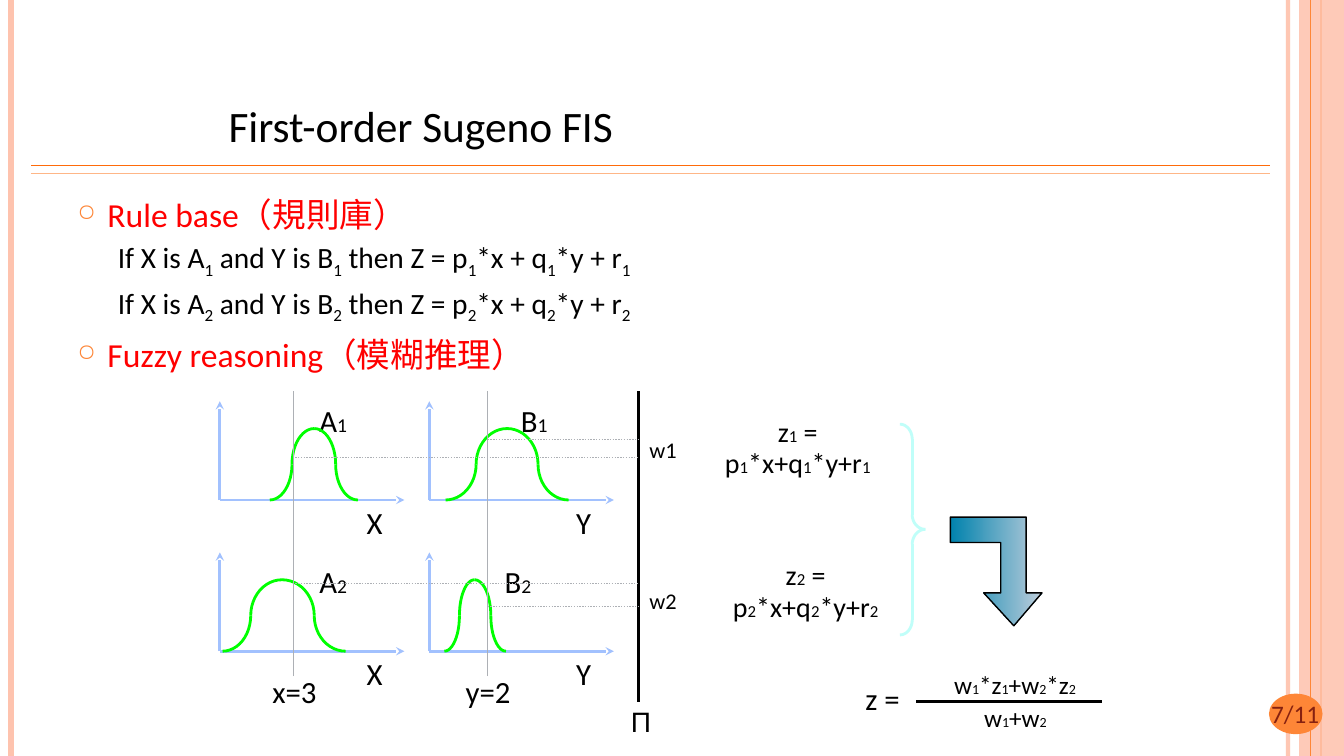
from math import cos, pi, sin

from lxml.etree import SubElement
from pptx import Presentation
from pptx.dml.color import RGBColor
from pptx.enum.dml import MSO_LINE as Dash
from pptx.enum.shapes import MSO_CONNECTOR as Link, MSO_SHAPE as Preset
from pptx.enum.text import MSO_ANCHOR as Anchor, MSO_AUTO_SIZE as Fit, PP_ALIGN as Align
from pptx.oxml.ns import qn
from pptx.util import Cm, Pt

BLACK, RED, ORANGE = "000000", "FF0000", "FE8637"
PEACH, AXIS, GUIDE = "FEC3AE", "A2C1FE", "ADB0B5"
GREEN, AQUA = "00FF00", "C0FEF9"
COLUMN_STEP, ROW_STEP = 5.28, 3.81
BASE, BELL_HALF = 12.6, 0.9


def rgb(code):
    return RGBColor.from_string(code)


def fade(part, percent):
    """Make the colour of a fill or line partly transparent."""
    for tone in part.iter(qn("a:srgbClr")):
        SubElement(tone, qn("a:alpha"), val=str(percent * 1000))


def draw_line(shapes, start, end, color, width, dash=None, arrow=False):
    line = shapes.add_connector(Link.STRAIGHT, *map(Cm, start + end))
    line.line.color.rgb = rgb(color)
    line.line.width = Pt(width)
    if dash:
        line.line.dash_style = dash
    if arrow:
        SubElement(line.line._get_or_add_ln(), qn("a:tailEnd"), type="stealth")
    SubElement(line._element.spPr, qn("a:effectLst"))
    return line


def draw_preset(shapes, kind, box, color):
    panel = shapes.add_shape(kind, *map(Cm, box))
    panel.shadow.inherit = False
    panel.fill.solid()
    panel.fill.fore_color.rgb = rgb(color)
    panel.line.fill.background()
    return panel


def draw_outline(shapes, points, color, width, close=False):
    corners = [(Cm(x), Cm(y)) for x, y in points]
    builder = shapes.build_freeform(*corners[0])
    builder.add_line_segments(corners[1:], close=close)
    outline = builder.convert_to_shape()
    outline.shadow.inherit = False
    outline.fill.background()
    outline.line.color.rgb = rgb(color)
    outline.line.width = Pt(width)
    return outline


def draw_quarter(shapes, flat, steep, color):
    """Quarter ellipse, level at the flat end and upright at the steep end."""
    angles = [step * pi / 24 for step in range(13)]
    points = [(flat[0] + (steep[0] - flat[0]) * sin(angle),
               flat[1] + (steep[1] - flat[1]) * (1 - cos(angle))) for angle in angles]
    draw_outline(shapes, points, color, 2)


def add_runs(paragraph, text, size, color=BLACK, small=None, font="Calibri"):
    """Write text; the character after each underscore is an index."""
    head, *rest = text.split("_")
    pieces = [(head, False)]
    for piece in rest:
        pieces += [(piece[0], True), (piece[1:], False)]
    for words, is_index in pieces:
        if not words:
            continue
        run = paragraph.add_run()
        run.text = words
        run.font.name = font
        run.font.size = Pt(small if is_index and small else size)
        run.font.color.rgb = rgb(color)
        if is_index and not small:
            run._r.get_or_add_rPr().set("baseline", "-25000")


def add_frame(shapes, box, wrap=True):
    frame = shapes.add_textbox(*map(Cm, box)).text_frame
    frame.word_wrap = wrap
    frame.auto_size = Fit.NONE
    return frame


def add_label(shapes, box, lines, size, small=None, align=Align.CENTER,
              spacing=0.7, font="Calibri"):
    frame = add_frame(shapes, box, wrap=False)
    for index, text in enumerate(lines):
        paragraph = frame.add_paragraph() if index else frame.paragraphs[0]
        paragraph.alignment = align
        paragraph.line_spacing = spacing
        if index:
            paragraph.space_before = Pt(0.3 * size)
        add_runs(paragraph, text, size, small=small, font=font)


def add_bullet(paragraph):
    props = paragraph._p.get_or_add_pPr()
    props.set("marL", str(Cm(0.76)))
    props.set("indent", str(-Cm(0.76)))
    SubElement(SubElement(props, qn("a:buClr")), qn("a:srgbClr"), val=ORANGE)
    SubElement(props, qn("a:buSzPct"), val="70000")
    SubElement(props, qn("a:buChar"), char="○")


def add_decoration(shapes):
    edge = draw_line(shapes, (32.46, 0), (32.46, 19.05), PEACH, 3)
    fade(edge._element, 93)
    draw_line(shapes, (0.28, 0), (0.28, 19.05), PEACH, 4.5)
    draw_line(shapes, (33.3, 0), (33.3, 19.05), ORANGE, 1.5)
    band = draw_preset(shapes, Preset.RECTANGLE, (32.74, 0, 1.13, 19.05), PEACH)
    fade(band._element, 87)
    draw_line(shapes, (33.02, 0), (33.02, 19.05), ORANGE, 0.75)
    for y, color in ((4.17, "FF6B0A"), (4.37, "FEB687")):
        draw_line(shapes, (0.79, y), (32, y), color, 1)
    draw_preset(shapes, Preset.OVAL, (31.98, 17.48, 1.35, 1.02), ORANGE)
    page = add_frame(shapes, (31.44, 17.48, 2.4, 1.02)).paragraphs[0]
    page.alignment = Align.CENTER
    add_runs(page, "7/11", 18, "862110")


def add_rules(shapes):
    title = add_frame(shapes, (5.51, 0.76, 21.95, 3.18))
    title.vertical_anchor = Anchor.BOTTOM
    add_runs(title.paragraphs[0], "First-order Sugeno FIS", 31)

    body = add_frame(shapes, (1.7, 4.75, 27.66, 13.23))
    heading = body.paragraphs[0]
    add_bullet(heading)
    add_runs(heading, "Rule base（規則庫）", 24, RED)
    for n in (1, 2):
        rule = body.add_paragraph()
        rule._p.get_or_add_pPr().set("marL", str(Cm(1.02)))
        rule.space_before = Pt(4)
        add_runs(rule, f"If X is A_{n} and Y is B_{n} then Z = p_{n}*x + q_{n}*y + r_{n}", 21)
    heading = body.add_paragraph()
    add_bullet(heading)
    heading.space_before = Pt(6)
    add_runs(heading, "Fuzzy reasoning（模糊推理）", 24, RED)


def add_membership(shapes, row, column, name, label_at, bell):
    """Axes, set name and bell given by its feet, shoulders and peak."""
    left, base = 5.54 + column * COLUMN_STEP, BASE + row * ROW_STEP
    draw_line(shapes, (left, base), (left + 4.65, base), AXIS, 2, arrow=True)
    draw_line(shapes, (left, base), (left, base - 2.49), AXIS, 2, arrow=True)
    add_label(shapes, (*label_at, 1.24, 1.09), [name], 22, 14, Align.LEFT, 0.9)
    left_foot, left_side, peak, right_side, right_foot = bell
    middle, top = base - BELL_HALF, base - 2 * BELL_HALF
    for flat, side in (((left_foot, base), left_side), ((peak, top), left_side),
                       ((peak, top), right_side), ((right_foot, base), right_side)):
        draw_quarter(shapes, flat, (side, middle), GREEN)
    add_label(shapes, (8.99 + column * COLUMN_STEP, 12.83 + row * ROW_STEP, 0.94, 0.97),
              ["XY"[column]], 22, align=Align.LEFT)


def add_firing(shapes):
    for x, left, name in ((7.39, 6.58, "x=3"), (12.29, 11.46, "y=2")):
        draw_line(shapes, (x, 17.04), (x, 9.86), GUIDE, 1)
        add_label(shapes, (left, 17.07, 1.68, 0.97), [name], 22)
    draw_line(shapes, (16.1, 17.68), (16.1, 9.86), BLACK, 2)
    for x, y in ((12.29, 15.29), (7.44, 14.71), (7.44, 11.53), (12.29, 11.07)):
        draw_line(shapes, (x, y), (16.1, y), GUIDE, 1, Dash.ROUND_DOT)
    for row, name in enumerate(("w1", "w2")):
        add_label(shapes, (16.1, 11.05 + row * ROW_STEP, 1.22, 0.76), [name], 16)
    add_label(shapes, (15.65, 17.63, 1.07, 1.12), ["Π"], 20, align=Align.LEFT,
              spacing=1.0, font="Arial")


def add_brace(shapes):
    brace = shapes.add_group_shape().shapes
    back, spine, tip = 22.68, 22.99, 23.32
    for flat, steep in (((back, 10.69), (spine, 11.07)), ((tip, 13.34), (spine, 12.97)),
                        ((tip, 13.34), (spine, 13.72)), ((back, 16), (spine, 15.62))):
        draw_quarter(brace, flat, steep, AQUA)
    for top, bottom in ((11.07, 12.97), (13.72, 15.62)):
        draw_line(brace, (spine, top), (spine, bottom), AQUA, 2)


def add_output(shapes):
    for n, left, top in ((1, 17.96, 10.54), (2, 18.16, 14.15)):
        add_label(shapes, (left, top, 4.29, 1.75),
                  [f"z_{n} =", f"p_{n}*x+q_{n}*y+r_{n}"], 20, 12)
    add_brace(shapes)
    arrow = draw_outline(shapes, [
        (23.95, 13.03), (25.86, 13.03), (25.86, 14.94), (26.26, 14.94), (25.55, 15.77),
        (24.79, 14.94), (25.22, 14.94), (25.22, 13.67), (23.95, 13.67)], BLACK, 1, close=True)
    arrow.fill.gradient()
    arrow.fill.gradient_angle = 0
    for stop, color in zip(arrow.fill.gradient_stops, ("0082AD", "BCCDDB")):
        stop.color.rgb = rgb(color)
    # Weighted average
    add_label(shapes, (21.54, 17.27, 1.4, 0.97), ["z ="], 22)
    draw_line(shapes, (23.09, 17.68), (27.76, 17.68), BLACK, 2)
    add_label(shapes, (23.75, 16.94, 3.66, 0.84), ["w_1*z_1+w_2*z_2"], 18, 10)
    add_label(shapes, (24.51, 17.78, 2.16, 0.84), ["w_1+w_2"], 18, 10)


def main():
    deck = Presentation()
    deck.slide_width, deck.slide_height = Cm(33.87), Cm(19.05)
    shapes = deck.slides.add_slide(deck.slide_layouts[6]).shapes
    add_decoration(shapes)
    add_rules(shapes)
    # Fuzzy sets: one row per rule, one column per input
    add_membership(shapes, 0, 0, "A_1", (7.8, 10.11), (6.8, 7.36, 7.92, 8.46, 9.02))
    add_membership(shapes, 0, 1, "B_1", (12.88, 10.11), (11.23, 12, 12.78, 13.56, 14.33))
    add_membership(shapes, 1, 0, "A_2", (7.8, 14.15), (5.61, 6.32, 7.11, 7.92, 8.71))
    add_membership(shapes, 1, 1, "B_2", (12.47, 14.15), (11.2, 11.58, 11.96, 12.37, 12.75))
    add_firing(shapes)
    add_output(shapes)
    deck.save("out.pptx")


if __name__ == "__main__":
    main()
